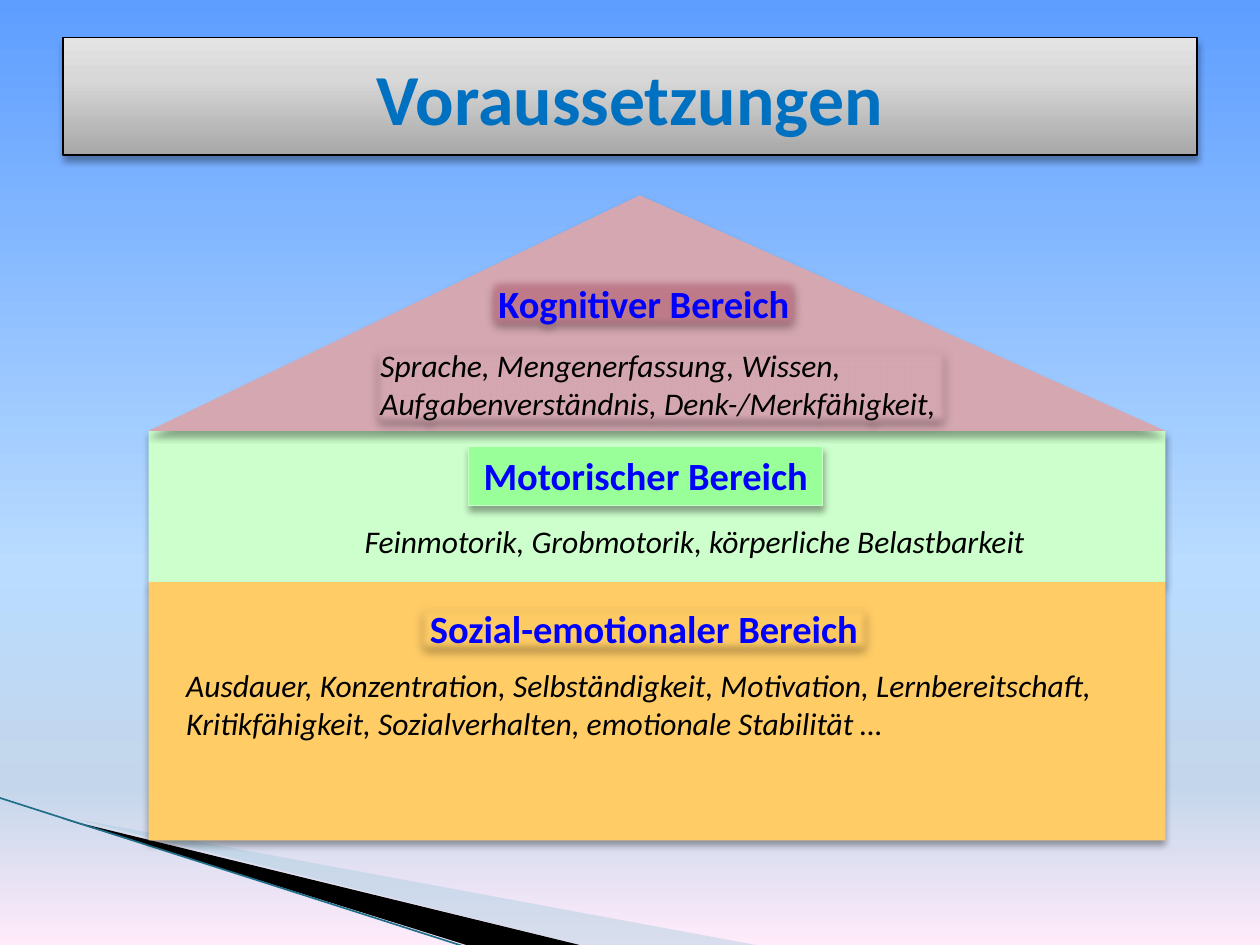
from lxml.etree import SubElement
from pptx import Presentation
from pptx.dml.color import RGBColor
from pptx.enum.shapes import MSO_CONNECTOR, MSO_SHAPE as SHAPE
from pptx.enum.text import MSO_ANCHOR, MSO_AUTO_SIZE, PP_ALIGN
from pptx.oxml.ns import qn
from pptx.util import Inches, Pt

COLORS = {
    "title": "0070C0", "heading": "0000FF", "black": "000000",
    "roof": "D5A7B1", "roof label": "C07B8A",
    "upper": "CCFFCC", "upper label": "99FF99", "lower": "FFCC66",
    "wedge": "A0CBDC", "edge": "1F6F8A",
}
RGB = {name: RGBColor.from_string(value) for name, value in COLORS.items()}
SKY = [(0, "5E9EFF"), (60, "B9DCFF"), (83, "C4D6EB"), (100, "FFEBFA")]
STEEL = [(0, "A7A7A7"), (65, "D8D8D8"), (100, "E4E4E4")]

prs = Presentation()
prs.slide_width, prs.slide_height = Inches(10), Inches(7.5)
U = prs.slide_width // 100  # grid of 100 columns by 75 rows
s = prs.slides.add_slide(prs.slide_layouts[6])


def set_gradient(fill, stops, angle):
    fill.gradient()
    fill.gradient_angle = angle
    gs_list = fill._fill._gradFill.find(qn("a:gsLst"))
    for gs in list(gs_list):
        gs_list.remove(gs)
    for pos, color in stops:
        gs = SubElement(gs_list, qn("a:gs"), pos=str(pos * 1000))
        SubElement(gs, qn("a:srgbClr"), val=color)


def add_block(kind, box, color, line=None, soft=False):
    """Add a filled shape with a drop shadow, on grid units."""
    sp = s.shapes.add_shape(kind, *(round(v * U) for v in box))
    sp.fill.solid()
    sp.fill.fore_color.rgb = RGB[color]
    if line:
        sp.line.color.rgb = RGB[line]
        sp.line.width = Pt(0.75)
    else:
        sp.line.fill.background()
    sp.shadow.inherit = False
    effects = sp._element.spPr.find(qn("a:effectLst"))
    shadow = SubElement(effects, qn("a:outerShdw"), blurRad=str(Pt(4)),
                        dist=str(Pt(3)), dir="5400000", rotWithShape="0")
    clr = SubElement(shadow, qn("a:srgbClr"), val=COLORS["black"])
    SubElement(clr, qn("a:alpha"), val="35000")
    if soft:
        SubElement(effects, qn("a:softEdge"), rad=str(Pt(5)))
    return sp


set_gradient(s.background.fill, SKY, 270)

# Wedges in the lower left corner
wedges = [
    ("wedge", 40, [(5.5, 65.1), (59.5, 75.1), (45.6, 75.1), (5.5, 65)]),
    ("black", 100, [(5.3, 64.9), (45.7, 75.1), (37.2, 75.2), (5.4, 65)]),
]
for color, opacity, points in wedges:
    builder = s.shapes.build_freeform(*points[0], scale=U)
    builder.add_line_segments(points[1:], close=True)
    sp = builder.convert_to_shape()
    sp.fill.solid()
    sp.fill.fore_color.rgb = RGB[color]
    clr = sp._element.spPr.find(qn("a:solidFill"))[0]
    SubElement(clr, qn("a:alpha"), val=str(opacity * 1000))
    sp.line.fill.background()
    sp.shadow.inherit = False

edge = s.shapes.add_connector(MSO_CONNECTOR.STRAIGHT, round(-0.1 * U),
                              round(63.3 * U), round(37.1 * U), round(75.2 * U))
edge.line.color.rgb = RGB["edge"]
edge.line.width = Pt(0.95)
SubElement(edge._element.spPr, qn("a:effectLst"))

# Title bar
bar = add_block(SHAPE.RECTANGLE, (5, 3, 90, 9.3), "black", "black")
set_gradient(bar.fill, STEEL, 90)
tf = bar.text_frame
tf.vertical_anchor = MSO_ANCHOR.MIDDLE
p = tf.paragraphs[0]
p.text = "Voraussetzungen"
p.alignment = PP_ALIGN.CENTER
p.font.name, p.font.size, p.font.bold = "Calibri", Pt(41), True
p.font.color.rgb = RGB["title"]

# House: two storeys and a roof
LEFT, WIDTH = 11.8, 80.7
add_block(SHAPE.RECTANGLE, (LEFT, 34.2, WIDTH, 12), "upper")
add_block(SHAPE.RECTANGLE, (LEFT, 46.2, WIDTH, 20.5), "lower")
roof = add_block(SHAPE.ISOSCELES_TRIANGLE, (LEFT, 15.5, WIDTH, 18.7), "roof")
roof.adjustments[0] = 0.483

headings = [
    ("Sozial-emotionaler Bereich", (32.7, 47.5, 36.8, 4.7), "lower", None, True),
    ("Motorischer Bereich", (37.2, 35.4, 28.1, 4.7), "upper label", "upper", False),
    ("Kognitiver Bereich", (38.4, 21.7, 25.4, 4.7), "roof label", None, True),
]
for text, box, color, line, soft in headings:
    tf = add_block(SHAPE.RECTANGLE, box, color, line, soft).text_frame
    tf.word_wrap = False
    tf.auto_size = MSO_AUTO_SIZE.SHAPE_TO_FIT_TEXT
    tf.vertical_anchor = MSO_ANCHOR.TOP
    p = tf.paragraphs[0]
    p.text = text
    p.alignment = PP_ALIGN.CENTER
    p.font.name, p.font.size, p.font.bold = "Calibri", Pt(22), True
    p.font.color.rgb = RGB["heading"]

details = [
    ("Feinmotorik, Grobmotorik, körperliche Belastbarkeit",
     (19.3, 40.9, 71.7, 4), PP_ALIGN.CENTER, None),
    ("Sprache, Mengenerfassung, Wissen, Aufgabenverständnis, "
     "Denk-/Merkfähigkeit,", (29.2, 27, 46.5, 7.1), PP_ALIGN.LEFT, "roof"),
    ("Ausdauer, Konzentration, Selbständigkeit, Motivation, Lernbereitschaft, "
     "Kritikfähigkeit, Sozialverhalten, emotionale Stabilität …",
     (13.8, 52.4, 75.6, 7.1), PP_ALIGN.LEFT, None),
]
for text, box, align, color in details:
    if color:
        sp = add_block(SHAPE.RECTANGLE, box, color, color, soft=True)
    else:
        sp = s.shapes.add_textbox(*(round(v * U) for v in box))
    tf = sp.text_frame
    tf.word_wrap = True
    tf.auto_size = MSO_AUTO_SIZE.SHAPE_TO_FIT_TEXT
    tf.vertical_anchor = MSO_ANCHOR.TOP
    p = tf.paragraphs[0]
    p.text = text
    p.alignment = align
    p.font.name, p.font.size, p.font.italic = "Calibri", Pt(18), True
    p.font.color.rgb = RGB["black"]

prs.save("out.pptx")
